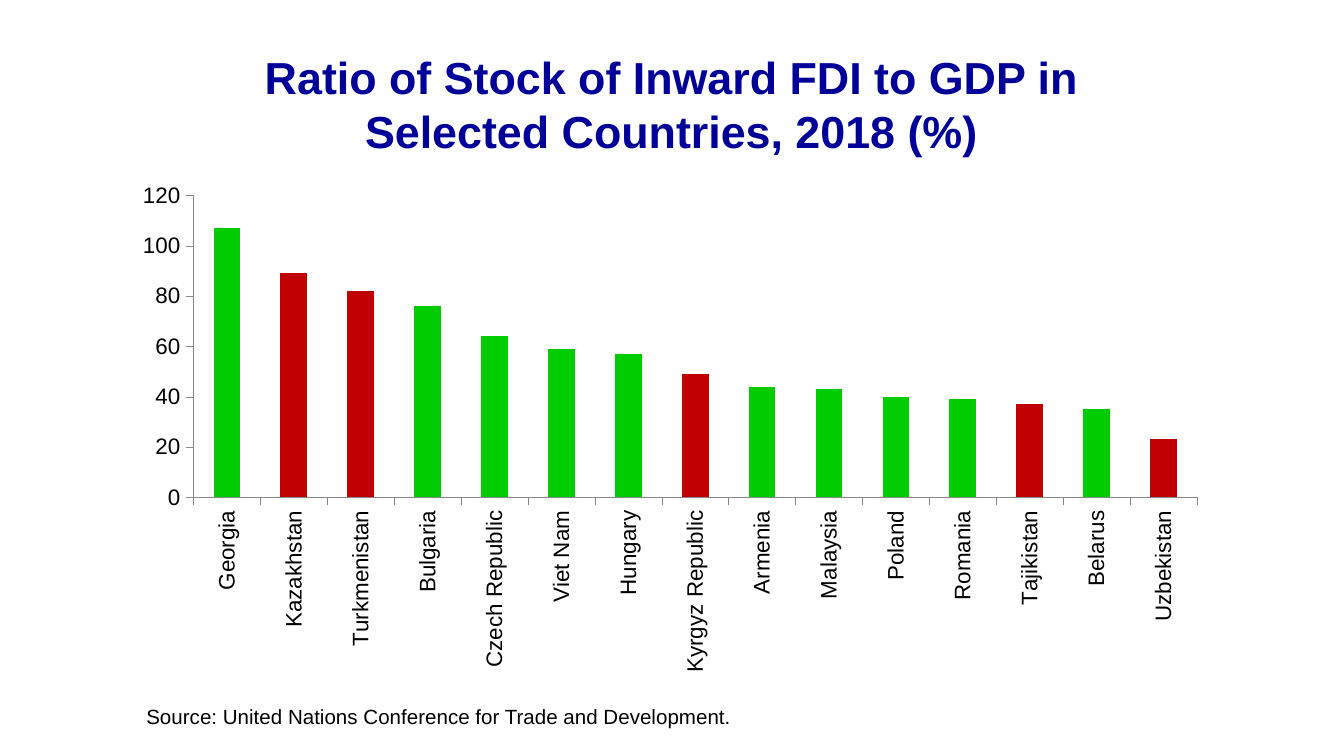
from pptx import Presentation
from pptx.chart.data import CategoryChartData
from pptx.dml.color import RGBColor
from pptx.enum import chart as ch, text
from pptx.util import Inches, Pt

FONT = "Arial"
NAVY, BLACK, GREY = "000099", "000000", "878787"
GREEN, RED = "00CC00", "C00000"

RATIOS = {
    "Georgia": 107, "Kazakhstan": 89, "Turkmenistan": 82, "Bulgaria": 76,
    "Czech Republic": 64, "Viet Nam": 59, "Hungary": 57,
    "Kyrgyz Republic": 49, "Armenia": 44, "Malaysia": 43, "Poland": 40,
    "Romania": 39, "Tajikistan": 37, "Belarus": 35, "Uzbekistan": 23,
}
CENTRAL_ASIA = {"Kazakhstan", "Turkmenistan", "Kyrgyz Republic",
                "Tajikistan", "Uzbekistan"}


def color(hex_code):
    return RGBColor.from_string(hex_code)


def style(font, size, hex_code, bold=False):
    font.name, font.size, font.bold = FONT, Pt(size), bold
    font.color.rgb = color(hex_code)


def paint(fill, hex_code):
    fill.solid()
    fill.fore_color.rgb = color(hex_code)


def add_text(slide, box, lines, size, hex_code, bold=False,
             align=text.PP_ALIGN.LEFT):
    frame = slide.shapes.add_textbox(*map(Inches, box)).text_frame
    frame.word_wrap = True
    frame.vertical_anchor = text.MSO_ANCHOR.MIDDLE
    frame.text = "\n".join(lines)
    for para in frame.paragraphs:
        para.alignment = align
        for run in para.runs:
            style(run.font, size, hex_code, bold)


def set_axis(axis):
    axis.has_major_gridlines = False
    axis.major_tick_mark = ch.XL_TICK_MARK.OUTSIDE
    axis.minor_tick_mark = ch.XL_TICK_MARK.NONE
    axis.format.line.color.rgb = color(GREY)
    axis.format.line.width = Pt(0.25)
    style(axis.tick_labels.font, 12, BLACK)


def add_columns(slide, box):
    data = CategoryChartData(number_format="0")
    data.categories = list(RATIOS)
    data.add_series("Series 1", list(RATIOS.values()))
    chart = slide.shapes.add_chart(
        ch.XL_CHART_TYPE.COLUMN_CLUSTERED, *map(Inches, box), data).chart
    chart.has_legend = False
    chart.has_title = False
    style(chart.font, 12, BLACK)

    # Axes, with upright country names
    set_axis(chart.category_axis)
    set_axis(chart.value_axis)
    names = chart.category_axis.tick_labels.font
    names._element.getparent().getparent().getparent().bodyPr.set(
        "rot", "-5400000")
    chart.value_axis.minimum_scale = 0
    chart.value_axis.maximum_scale = 120
    chart.value_axis.major_unit = 20
    chart.value_axis.tick_labels.number_format = "0"
    chart.value_axis.tick_labels.number_format_is_linked = False

    # Columns, with Central Asia in red
    plot = chart.plots[0]
    plot.gap_width = 150
    plot.vary_by_categories = False
    bars = plot.series[0]
    paint(bars.format.fill, GREEN)
    for i, name in enumerate(RATIOS):
        if name in CENTRAL_ASIA:
            paint(bars.points[i].format.fill, RED)


def main():
    # Widescreen page, 16:9
    deck = Presentation()
    deck.slide_width = Inches(10)
    deck.slide_height = Inches(10 * 9 / 16)
    slide = deck.slides.add_slide(deck.slide_layouts[6])

    # Title
    add_text(slide, (1.13, 0.41, 7.73, 0.72),
             ["Ratio of Stock of Inward FDI to GDP in",
              "Selected Countries, 2018 (%)"],
             24, NAVY, True, text.PP_ALIGN.CENTER)
    # Chart
    add_columns(slide, (0.9, 1.29, 8.17, 3.79))
    # Source line
    add_text(slide, (0.99, 5.08, 8.08, 0.5),
             ["Source: United Nations Conference for Trade and Development."],
             11, BLACK)

    deck.save("out.pptx")


if __name__ == "__main__":
    main()
